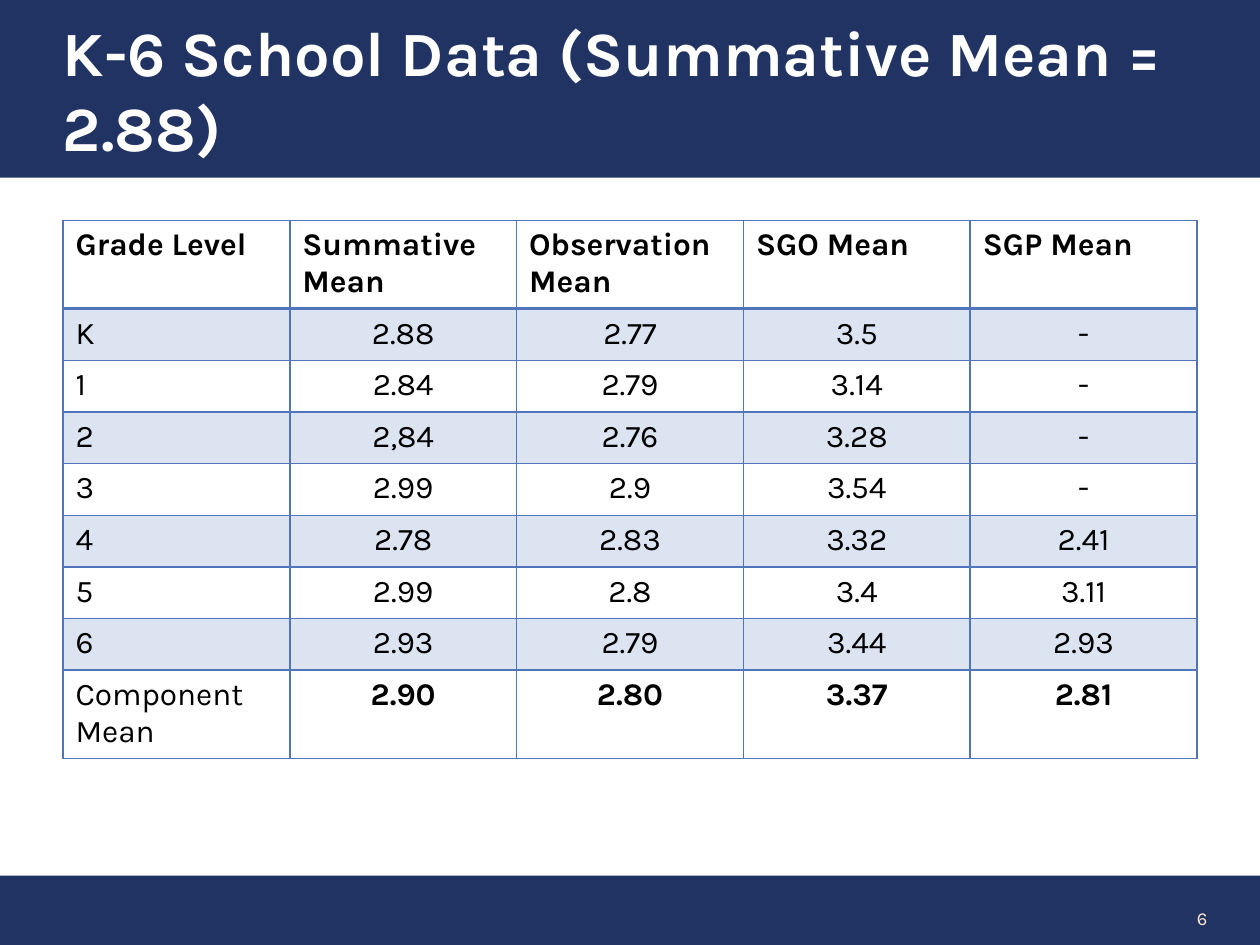
from dataclasses import dataclass

from lxml.etree import SubElement
from pptx import Presentation
from pptx.dml.color import RGBColor
from pptx.enum.shapes import MSO_SHAPE
from pptx.enum.text import MSO_ANCHOR, PP_ALIGN
from pptx.oxml import parse_xml
from pptx.oxml.ns import nsdecls, qn
from pptx.util import Inches, Pt


@dataclass(frozen=True)
class Theme:
    font: str = "Karla"
    navy: str = "213363"
    blue: str = "5075BB"
    white: str = "FFFFFF"
    black: str = "000000"
    cream: str = "FEEBD0"
    title: float = 36
    body: float = 18
    number: float = 10.5


theme = Theme()
BAND_ALPHA = 20000

ROWS = [
    ["Grade Level", "Summative Mean", "Observation Mean", "SGO Mean", "SGP Mean"],
    ["K", "2.88", "2.77", "3.5", "-"],
    ["1", "2.84", "2.79", "3.14", "-"],
    ["2", "2,84", "2.76", "3.28", "-"],
    ["3", "2.99", "2.9", "3.54", "-"],
    ["4", "2.78", "2.83", "3.32", "2.41"],
    ["5", "2.99", "2.8", "3.4", "3.11"],
    ["6", "2.93", "2.79", "3.44", "2.93"],
    ["Component Mean", "2.90", "2.80", "3.37", "2.81"],
]


def write(tf, text, size, color, bold=False, align=PP_ALIGN.LEFT):
    tf.word_wrap = True
    p = tf.paragraphs[0]
    p.alignment = align
    r = p.add_run()
    r.text = text
    for name, value in {"name": theme.font, "size": Pt(size), "bold": bold}.items():
        setattr(r.font, name, value)
    r.font.color.rgb = RGBColor.from_string(color)


def set_borders(cell, widths):
    """Draw the cell's sides; widths are points for left, right, top, bottom."""
    tcPr = cell._tc.get_or_add_tcPr()
    for i, (side, width) in enumerate(zip("LRTB", widths)):
        tcPr.insert(i, parse_xml(
            f'<a:ln{side} {nsdecls("a")} w="{Pt(width)}"><a:solidFill>'
            f'<a:srgbClr val="{theme.blue}"/></a:solidFill></a:ln{side}>'))


prs = Presentation()
prs.slide_width, prs.slide_height = Inches(10), Inches(7.5)
s = prs.slides.add_slide(prs.slide_layouts[6])

# Footer and title bands
bands = []
for left, top, width, height in [(0, 6.95, 10.02, 0.59), (0, 0, 10, 1.41)]:
    sp = s.shapes.add_shape(MSO_SHAPE.RECTANGLE, Inches(left), Inches(top),
                            Inches(width), Inches(height))
    sp.shadow.inherit = False
    sp.fill.solid()
    sp.fill.fore_color.rgb = RGBColor.from_string(theme.navy)
    sp.line.fill.background()
    bands.append(sp)

title_tf = bands[1].text_frame
title_format = {
    "margin_left": Inches(0.5), "margin_right": Inches(0.1),
    "margin_top": Inches(0.05), "margin_bottom": Inches(0.05),
    "vertical_anchor": MSO_ANCHOR.MIDDLE,
}
for name, value in title_format.items():
    setattr(title_tf, name, value)
write(title_tf, "K-6 School Data (Summative Mean = 2.88)", theme.title, theme.white, bold=True)

# Slide number
number = s.shapes.add_textbox(Inches(8.22), Inches(7.09), Inches(1.46), Inches(0.4))
number.text_frame.vertical_anchor = MSO_ANCHOR.MIDDLE
write(number.text_frame, "6", theme.number, theme.cream, align=PP_ALIGN.RIGHT)

# Grade table
row_height = Inches(0.41)
table = s.shapes.add_table(len(ROWS), len(ROWS[0]), Inches(0.5), Inches(1.75),
                           Inches(9), row_height * len(ROWS)).table
last = len(ROWS) - 1
for i, row in enumerate(ROWS):
    table.rows[i].height = row_height
    for j, text in enumerate(row):
        cell = table.cell(i, j)
        is_label = i == 0 or j == 0
        write(cell.text_frame, text, theme.body, theme.black,
              bold=i == 0 or (i == last and j > 0),
              align=PP_ALIGN.LEFT if is_label else PP_ALIGN.CENTER)
        if i % 2:
            cell.fill.solid()
            cell.fill.fore_color.rgb = RGBColor.from_string(theme.blue)
            color = cell._tc.tcPr.find(".//" + qn("a:srgbClr"))
            SubElement(color, qn("a:alpha"), val=str(BAND_ALPHA))
        else:
            cell.fill.background()
        set_borders(cell, (1, 1, 2 if i == 1 else 1, 2 if i == 0 else 1))

prs.save("out.pptx")
